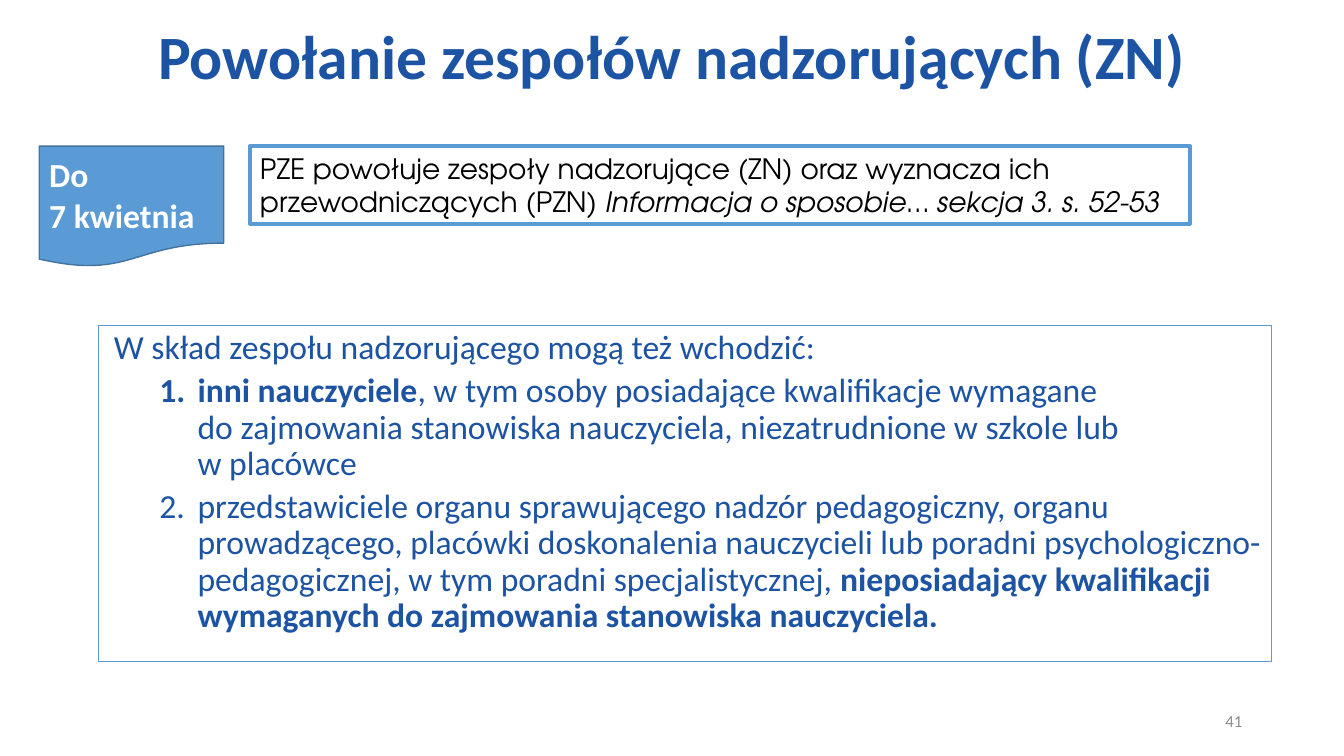
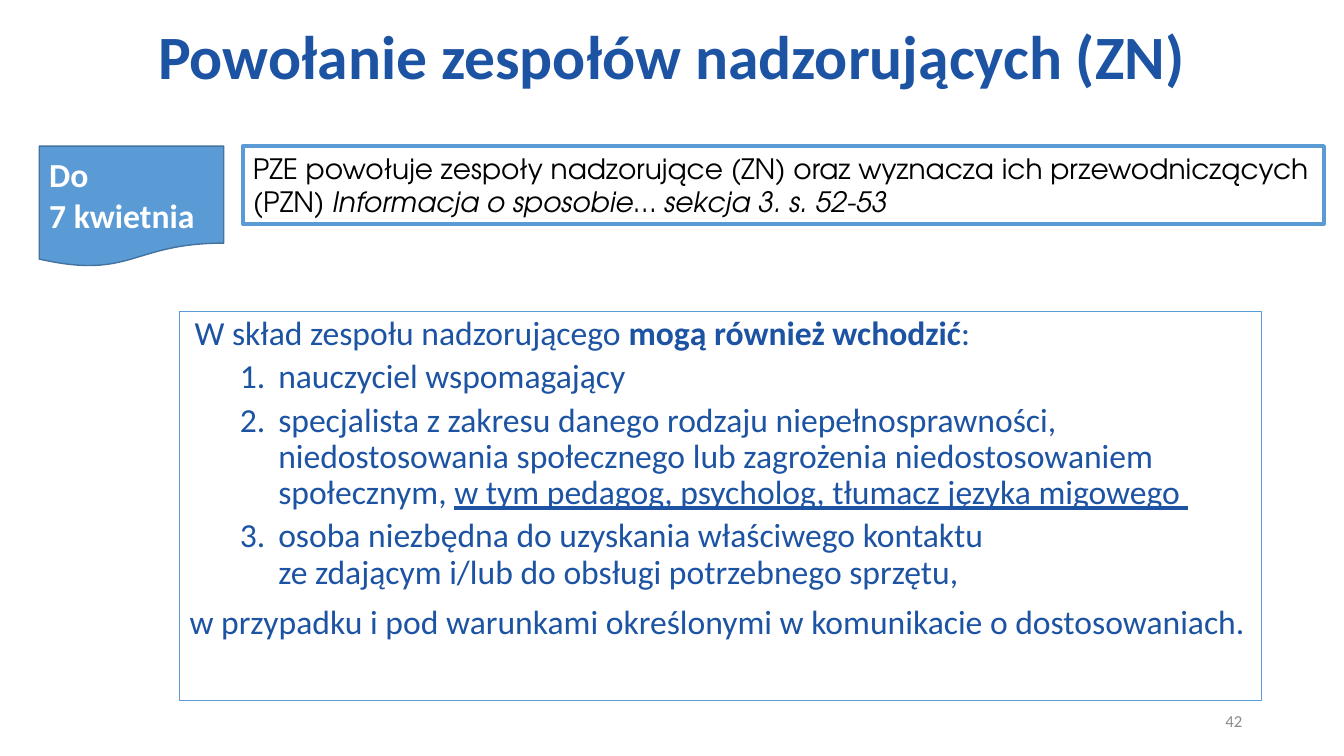
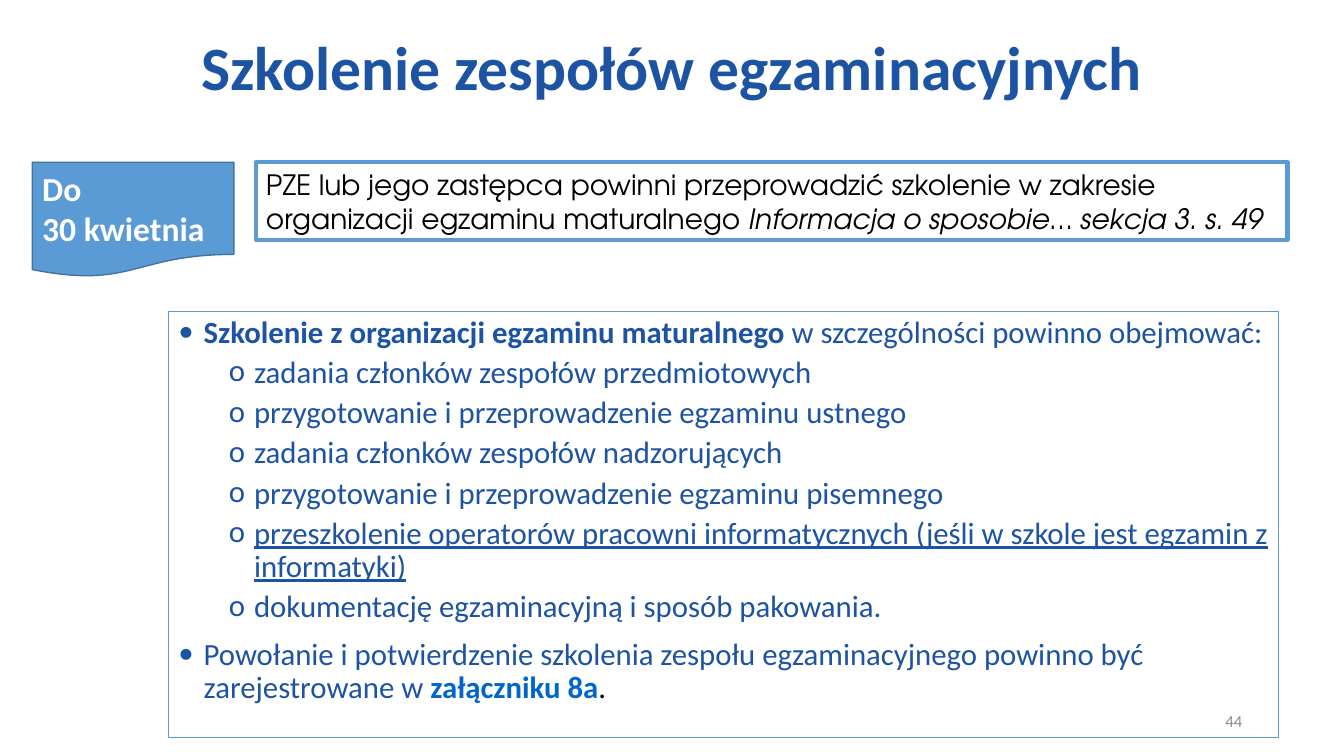
from lxml.etree import SubElement
from pptx import Presentation
from pptx.dml.color import RGBColor
from pptx.enum.shapes import MSO_SHAPE as SHAPE
from pptx.enum.text import MSO_ANCHOR as ANCHOR, MSO_AUTO_SIZE as AUTO, PP_ALIGN as ALIGN
from pptx.oxml.ns import qn
from pptx.util import Inches, Pt

WIDTH, HEIGHT = 13.33, 7.5
NAVY, BLUE, EDGE = "1D53A3", "5B9BD5", "43739E"
LINK, GREY, BLACK, WHITE = "0066CC", "8C8C8C", "000000", "FFFFFF"
BODY_FONT, NOTE_FONT = "Calibri", "TeX Gyre Adventor"
NOTE_HEIGHT = 0.77

# Paragraph kinds: level, left indent, first line, space before, bullet
LEAD = (0, 0.05, 0, 10, None)
PLAIN = (0, 0, 0, 10, None)
NUMBER = (1, 0.88, -0.38, 5, "1.")
DOT = (0, 0.25, -0.25, 10, "•")
CIRCLE = (1, 0.75, -0.25, 5, "o")


def rgb(color):
    return RGBColor.from_string(color)


def place(s, box):
    s.left, s.top, s.width, s.height = map(Inches, box)


def add_text(p, text, size=24, color=NAVY, font=BODY_FONT, **styles):
    """Add text to a paragraph; styles are font attributes such as bold."""
    for i, line in enumerate(text.split("\n")):
        if i:
            p.add_line_break()
        r = p.add_run()
        r.text = line
        r.font.name, r.font.size = font, Pt(size)
        r.font.color.rgb = rgb(color)
        for name, value in styles.items():
            setattr(r.font, name, value)


def set_line(s, color, width):
    s.line.color.rgb = rgb(color)
    s.line.width = Pt(width)


def set_list(p, kind, first):
    level, left, indent, before, bullet = kind
    p.level, p.line_spacing = level, 0.9
    p.space_before = Pt(0 if first else before)
    pPr = p._p.get_or_add_pPr()
    pPr.set("marL", str(Inches(left)))
    pPr.set("indent", str(Inches(indent)))
    if bullet is None:
        SubElement(pPr, qn("a:buNone"))
        return
    SubElement(pPr, qn("a:buFont")).set("typeface", BODY_FONT)
    if bullet == "1.":
        SubElement(pPr, qn("a:buAutoNum")).set("type", "arabicPeriod")
    else:
        SubElement(pPr, qn("a:buChar")).set("char", bullet)


def add_title(slide, text, height):
    s = slide.shapes.title
    place(s, (0, 0, WIDTH, height))
    tf = s.text_frame
    tf.vertical_anchor, tf.auto_size = ANCHOR.MIDDLE, AUTO.NONE
    p = tf.paragraphs[0]
    p.alignment, p.line_spacing = ALIGN.CENTER, 0.9
    add_text(p, text, size=44, bold=True)


def add_box(slide, shape, box, fill, line, width):
    """Add an outlined shape and return its left-aligned first paragraph."""
    s = slide.shapes.add_shape(shape, *map(Inches, box))
    s.shadow.inherit = False
    if fill:
        s.fill.solid()
        s.fill.fore_color.rgb = rgb(fill)
    else:
        s.fill.background()
    set_line(s, line, width)
    tf = s.text_frame
    tf.word_wrap, tf.vertical_anchor = True, ANCHOR.MIDDLE
    p = tf.paragraphs[0]
    p.alignment = ALIGN.LEFT
    return p


def add_deadline(slide, box, date):
    p = add_box(slide, SHAPE.FLOWCHART_DOCUMENT, box, BLUE, EDGE, 1)
    add_text(p, f"Do\n{date}", color=WHITE, bold=True)


def add_note(slide, left, top, width, task, section):
    p = add_box(slide, SHAPE.RECTANGLE, (left, top, width, NOTE_HEIGHT), None, BLUE, 3)
    style = dict(size=20, color=BLACK, font=NOTE_FONT)
    add_text(p, task + " ", **style)
    add_text(p, f"Informacja o sposobie… sekcja 3. s. {section}", italic=True, **style)


def add_body(slide, box, items, size):
    """Fill the body placeholder; each item is a kind and its (text, styles) runs."""
    s = slide.placeholders[1]
    place(s, box)
    set_line(s, BLUE, 0.75)
    tf = s.text_frame
    tf.auto_size, tf.vertical_anchor = AUTO.NONE, ANCHOR.TOP
    for i, (kind, *runs) in enumerate(items):
        p = tf.add_paragraph() if i else tf.paragraphs[0]
        set_list(p, kind, first=i == 0)
        for text, styles in runs:
            add_text(p, text, **{"size": size, **styles})


def add_number(slide, number):
    tf = slide.shapes.add_textbox(*map(Inches, (9.42, 6.95, 3, 0.4))).text_frame
    tf.word_wrap, tf.vertical_anchor = True, ANCHOR.MIDDLE
    p = tf.paragraphs[0]
    p.alignment = ALIGN.RIGHT
    add_text(p, str(number), size=12, color=GREY)


def add_task_slide(prs, number, title, title_height, date, date_box,
                   note_left, note_width, task, section, body_box, items, size=24):
    slide = prs.slides.add_slide(prs.slide_layouts[1])
    add_title(slide, title, title_height)
    add_body(slide, body_box, items, size)
    add_number(slide, number)
    add_note(slide, note_left, date_box[1], note_width, task, section)
    add_deadline(slide, date_box, date)


BOLD, UNDER, NONE = {"bold": True}, {"underline": True}, {}

SUPERVISION = dict(
    title="Powołanie zespołów nadzorujących (ZN)", title_height=1.18,
    date="7 kwietnia", date_box=(0.39, 1.45, 1.83, 1.2),
    task="PZE powołuje zespoły nadzorujące (ZN) oraz wyznacza ich przewodniczących (PZN)",
    section="52-53")

OTHER_MEMBERS = [
    (LEAD, ("W skład zespołu nadzorującego mogą też wchodzić:", NONE)),
    (NUMBER, ("inni nauczyciele", BOLD),
     (", w tym osoby posiadające kwalifikacje wymagane\ndo zajmowania stanowiska "
      "nauczyciela, niezatrudnione w szkole lub\nw placówce", NONE)),
    (NUMBER,
     ("przedstawiciele organu sprawującego nadzór pedagogiczny, organu prowadzącego, "
      "placówki doskonalenia nauczycieli lub poradni psychologiczno-pedagogicznej, "
      "w tym poradni specjalistycznej, ", NONE),
     ("nieposiadający kwalifikacji wymaganych do zajmowania stanowiska nauczyciela.", BOLD)),
]

SUPPORT_MEMBERS = [
    (LEAD, ("W skład zespołu nadzorującego ", NONE), ("mogą również wchodzić", BOLD), (":", NONE)),
    (NUMBER, ("nauczyciel wspomagający", NONE)),
    (NUMBER,
     ("specjalista z zakresu danego rodzaju niepełnosprawności, niedostosowania "
      "społecznego lub zagrożenia niedostosowaniem społecznym, ", NONE),
     ("w tym pedagog, psycholog, tłumacz języka migowego ", UNDER)),
    (NUMBER, ("osoba niezbędna do uzyskania właściwego kontaktu\n"
              "ze zdającym i/lub do obsługi potrzebnego sprzętu,", NONE)),
    (PLAIN, ("w przypadku i pod warunkami określonymi w komunikacie o dostosowaniach.", NONE)),
]

TRAINING = [
    (DOT, ("Szkolenie z organizacji egzaminu maturalnego", BOLD),
     (" w szczególności powinno obejmować:", NONE)),
    (CIRCLE, ("zadania członków zespołów przedmiotowych", NONE)),
    (CIRCLE, ("przygotowanie i przeprowadzenie egzaminu ustnego", NONE)),
    (CIRCLE, ("zadania członków zespołów nadzorujących", NONE)),
    (CIRCLE, ("przygotowanie i przeprowadzenie egzaminu pisemnego", NONE)),
    (CIRCLE, ("przeszkolenie operatorów pracowni informatycznych "
              "(jeśli w szkole jest egzamin z informatyki)", UNDER)),
    (CIRCLE, ("dokumentację egzaminacyjną i sposób pakowania.", NONE)),
    (DOT, ("Powołanie i potwierdzenie szkolenia zespołu egzaminacyjnego powinno być "
           "zarejestrowane w ", NONE),
     ("załączniku 8a", {"color": LINK, "bold": True}), (".", {"color": BLACK})),
]


def main():
    prs = Presentation()
    prs.slide_width, prs.slide_height = Inches(WIDTH), Inches(HEIGHT)
    add_task_slide(prs, 41, note_left=2.48, note_width=9.32,
                   body_box=(0.98, 3.23, 11.63, 3.33), items=OTHER_MEMBERS, **SUPERVISION)
    add_task_slide(prs, 42, note_left=2.41, note_width=10.72,
                   body_box=(1.78, 3.09, 10.73, 3.86), items=SUPPORT_MEMBERS, **SUPERVISION)
    add_task_slide(prs, 44, title="Szkolenie zespołów egzaminacyjnych", title_height=1.4,
                   date="30 kwietnia", date_box=(0.32, 1.61, 2, 1.14),
                   note_left=2.54, note_width=10.23,
                   task="PZE lub jego zastępca powinni przeprowadzić szkolenie w zakresie "
                        "organizacji egzaminu maturalnego",
                   section="49", body_box=(1.67, 3.09, 11.01, 4.23), items=TRAINING, size=22)
    prs.save("out.pptx")


if __name__ == "__main__":
    main()
